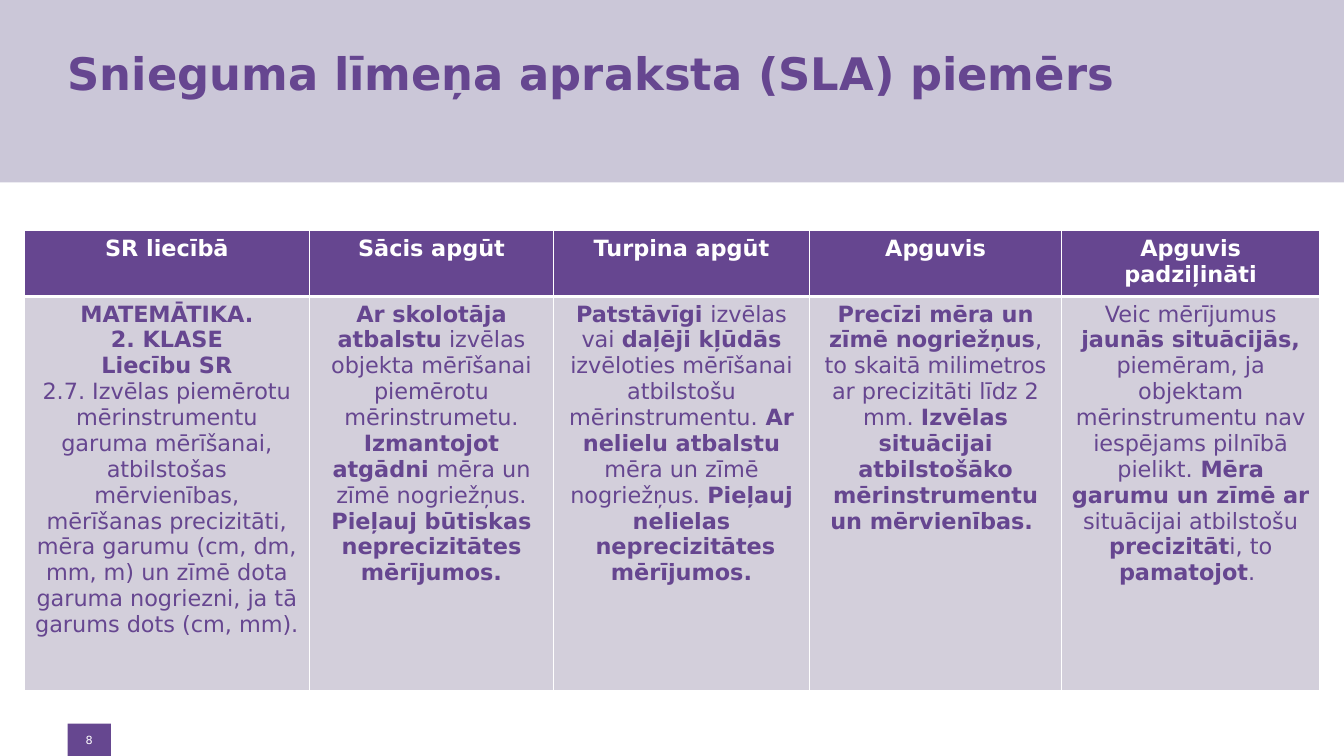
from dataclasses import dataclass
from typing import Any

from lxml import etree
from pptx import Presentation
from pptx.dml.color import RGBColor
from pptx.enum.shapes import MSO_SHAPE
from pptx.enum.text import MSO_ANCHOR, MSO_AUTO_SIZE, PP_ALIGN
from pptx.oxml.ns import qn
from pptx.util import Inches, Pt

RECTANGLE = MSO_SHAPE.RECTANGLE
MIDDLE = MSO_ANCHOR.MIDDLE
NO_AUTOFIT = MSO_AUTO_SIZE.NONE
LEFT = PP_ALIGN.LEFT
CENTER = PP_ALIGN.CENTER

PURPLE = RGBColor(0x66, 0x46, 0x90)
BADGE_PURPLE = RGBColor(0x66, 0x47, 0x90)
LAVENDER = RGBColor(0xCB, 0xC7, 0xD8)
PALE = RGBColor(0xD3, 0xCF, 0xDB)
WHITE = RGBColor(0xFF, 0xFF, 0xFF)

FONT = "DejaVu Sans"
BOLD_MARK = "*"
TITLE_ONLY = 5


@dataclass(frozen=True)
class Block:
    left: float
    top: float
    width: float
    height: float
    fill: RGBColor


@dataclass(frozen=True)
class Level:
    heading: list[str]
    width: float
    description: list[str]


HEADER_BAND = Block(0, 0, 13.33, 1.81, LAVENDER)
PAGE_BADGE = Block(0.67, 7.18, 0.43, 0.32, BADGE_PURPLE)
ROW_HEIGHTS = [0.65, 3.91]

LEVELS = [
    Level(["*SR liecībā*"], 2.83, [
        "*MATEMĀTIKA.*",
        "*2. KLASE*",
        "*Liecību SR*",
        "2.7. Izvēlas piemērotu mērinstrumentu garuma mērīšanai, atbilstošas "
        "mērvienības, mērīšanas precizitāti, mēra garumu (cm, dm, mm, m) un zīmē "
        "dota garuma nogriezni, ja tā garums dots (cm, mm).",
    ]),
    Level(["*Sācis apgūt*"], 2.42, [
        "*Ar skolotāja atbalstu* izvēlas objekta mērīšanai piemērotu mērinstrumetu.",
        "*Izmantojot atgādni *mēra un zīmē nogriežņus. "
        "*Pieļauj būtiskas neprecizitātes mērījumos.*",
    ]),
    Level(["*Turpina apgūt*"], 2.54, [
        "*Patstāvīgi *izvēlas vai *daļēji kļūdās* izvēloties mērīšanai atbilstošu "
        "mērinstrumentu.* Ar nelielu atbalstu* mēra un zīmē nogriežņus. "
        "*Pieļauj nelielas*",
        "* neprecizitātes mērījumos.*",
    ]),
    Level(["*Apguvis*"], 2.5, [
        "*Precīzi mēra un zīmē nogriežņus*, to skaitā milimetros ar precizitāti "
        "līdz 2 mm. *Izvēlas situācijai atbilstošāko mērinstrumentu un mērvienības. *",
    ]),
    Level(["*Apguvis*", "*padziļināti*"], 2.56, [
        "Veic mērījumus* jaunās situācijās,* piemēram, ja objektam mērinstrumentu "
        "nav iespējams pilnībā pielikt.* Mēra garumu un zīmē ar *situācijai "
        "atbilstošu *precizitāt*i, to *pamatojot*. ",
    ]),
]


def apply_format(target: Any, values: dict[str, Any]) -> None:
    for name, value in values.items():
        setattr(target, name, value)


def write_text(frame: Any, lines: list[str], size: int, color: RGBColor,
               align: Any = CENTER) -> None:
    for index, line in enumerate(lines):
        paragraph = frame.add_paragraph() if index else frame.paragraphs[0]
        paragraph.alignment = align
        for part, words in enumerate(line.split(BOLD_MARK)):
            if words:
                run = paragraph.add_run()
                run.text = words
                apply_format(run.font, {"name": FONT, "size": Pt(size), "bold": part % 2 == 1})
                run.font.color.rgb = color


def add_block(slide: Any, block: Block) -> Any:
    shape = slide.shapes.add_shape(RECTANGLE, Inches(block.left), Inches(block.top),
                                   Inches(block.width), Inches(block.height))
    shape.shadow.inherit = False
    shape.fill.solid()
    shape.fill.fore_color.rgb = block.fill
    shape.line.fill.background()
    return shape


def add_borders(cell: Any, points: dict[str, int]) -> None:
    properties = cell._tc.get_or_add_tcPr()
    for side, width in points.items():
        line = etree.SubElement(properties, qn(f"a:ln{side}"), w=str(Pt(width)))
        fill = etree.SubElement(line, qn("a:solidFill"))
        etree.SubElement(fill, qn("a:srgbClr"), val=str(WHITE))


def fill_cell(cell: Any, lines: list[str], color: RGBColor, fill: RGBColor,
              borders: dict[str, int]) -> None:
    add_borders(cell, borders)
    cell.fill.solid()
    cell.fill.fore_color.rgb = fill
    write_text(cell.text_frame, lines, 16, color)


def add_title(slide: Any) -> None:
    title = slide.shapes.title
    apply_format(title, {"left": Inches(0.67), "top": Inches(0.28),
                         "width": Inches(12.14), "height": Inches(1.25)})
    apply_format(title.text_frame, {
        "word_wrap": True, "auto_size": NO_AUTOFIT, "vertical_anchor": MIDDLE,
        "margin_left": 0, "margin_top": Inches(0.05),
        "margin_right": Inches(0.1), "margin_bottom": Inches(0.41),
    })
    write_text(title.text_frame, ["*Snieguma līmeņa apraksta (SLA) piemērs*"],
               32, PURPLE, LEFT)


def add_level_table(slide: Any) -> None:
    table = slide.shapes.add_table(
        len(ROW_HEIGHTS), len(LEVELS), Inches(0.24), Inches(2.29),
        Inches(sum(level.width for level in LEVELS)), Inches(sum(ROW_HEIGHTS))).table
    for row, height in zip(table.rows, ROW_HEIGHTS):
        row.height = Inches(height)
    for index, level in enumerate(LEVELS):
        table.columns[index].width = Inches(level.width)
        fill_cell(table.cell(0, index), level.heading, WHITE, PURPLE,
                  {"L": 1, "R": 1, "T": 1, "B": 3})
        fill_cell(table.cell(1, index), level.description, PURPLE, PALE,
                  {"L": 1, "R": 1, "T": 3, "B": 1})


def add_page_number(slide: Any) -> None:
    frame = add_block(slide, PAGE_BADGE).text_frame
    margins = dict.fromkeys(
        ["margin_left", "margin_top", "margin_right", "margin_bottom"], Inches(0.04))
    apply_format(frame, {"word_wrap": True, "vertical_anchor": MIDDLE, **margins})
    write_text(frame, ["8"], 8, WHITE)


def main() -> None:
    presentation = Presentation()
    apply_format(presentation, {"slide_width": Inches(13.33), "slide_height": Inches(7.5)})
    slide = presentation.slides.add_slide(presentation.slide_layouts[TITLE_ONLY])
    band = add_block(slide, HEADER_BAND)
    slide.shapes.title._element.addprevious(band._element)
    add_title(slide)
    add_page_number(slide)
    add_level_table(slide)
    presentation.save("out.pptx")


if __name__ == "__main__":
    main()
